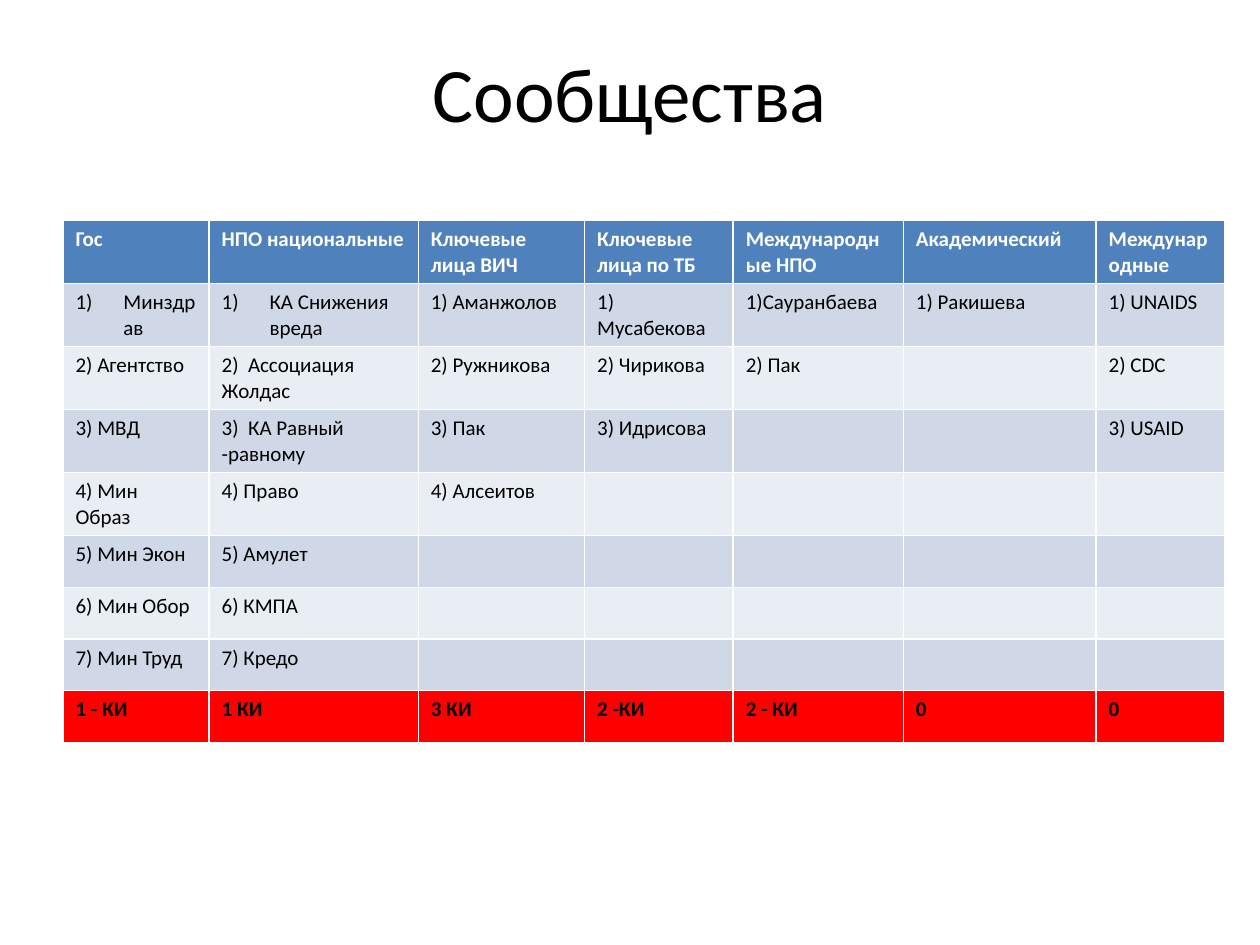
from lxml.etree import SubElement
from pptx import Presentation
from pptx.dml.color import RGBColor
from pptx.enum.text import MSO_ANCHOR, PP_ALIGN
from pptx.oxml.ns import qn
from pptx.util import Inches, Pt

TITLE = "Сообщества"
HEADS = ["Гос", "НПО национальные", "Ключевые лица ВИЧ", "Ключевые лица по ТБ",
         "Международные НПО", "Академический", "Международные"]
# Members of each community, top to bottom
LISTS = [
    ["Минздрав", "2) Агентство", "3) МВД", "4) Мин Образ",
     "5) Мин Экон", "6) Мин Обор", "7) Мин Труд"],
    ["КА Снижения вреда", "2)  Ассоциация Жолдас", "3)  КА Равный -равному",
     "4) Право", "5) Амулет", "6) КМПА", "7) Кредо"],
    ["1) Аманжолов", "2) Ружникова", "3) Пак", "4) Алсеитов"],
    ["1) Мусабекова", "2) Чирикова", "3) Идрисова"],
    ["1)Сауранбаева", "2) Пак"],
    ["1) Ракишева"],
    ["1) UNAIDS", "2) CDC", "3) USAID"],
]
TOTALS = ["1 - КИ", "1 КИ", "3 КИ", "2 -КИ", "2 - КИ", "0", "0"]
AUTO = {"Минздрав", "КА Снижения вреда"}  # numbered by the list format
WIDTHS = [1.16, 1.66, 1.32, 1.18, 1.35, 1.53, 1.02]
HIGH = 0.41
HEAD, ODD, EVEN, TOTAL = "4F81BD", "D0D8E8", "E9EDF4", "FF0000"


def color(code):
    return RGBColor.from_string(code)


def write(frame, text, size=12, ink="000000", bold=False, align=None):
    para = frame.paragraphs[0]
    para.alignment = align
    run = para.add_run()
    run.text = text
    font = run.font
    font.name, font.size, font.bold = "Calibri", Pt(size), bold
    font.color.rgb = color(ink)
    return para


def number(para):
    props = para._p.get_or_add_pPr()
    props.set("marL", str(Inches(0.38)))
    props.set("indent", str(Inches(-0.38)))
    SubElement(props, qn("a:buFont")).set("typeface", "+mj-lt")
    SubElement(props, qn("a:buAutoNum")).set("type", "arabicParenR")


deck = Presentation()
deck.slide_width, deck.slide_height = Inches(10), Inches(7.5)
slide = deck.slides.add_slide(deck.slide_layouts[6])

# Title
box = slide.shapes.add_textbox(Inches(0.5), Inches(0.3), Inches(9), Inches(0.85))
box.text_frame.word_wrap = True
box.text_frame.vertical_anchor = MSO_ANCHOR.MIDDLE
write(box.text_frame, TITLE, size=44, align=PP_ALIGN.CENTER)

# Rows: heads, members padded to equal length, totals
depth = max(map(len, LISTS))
body = [[col[i] if i < len(col) else "" for col in LISTS] for i in range(depth)]
rows = [HEADS, *body, TOTALS]
fills = [HEAD, *[EVEN if i % 2 else ODD for i in range(depth)], TOTAL]

# Table
grid = slide.shapes.add_table(
    len(rows), len(HEADS), Inches(0.5), Inches(1.75),
    Inches(sum(WIDTHS)), Inches(HIGH * len(rows))).table
for col, wide in zip(grid.columns, WIDTHS):
    col.width = Inches(wide)
for r, (row, fill) in enumerate(zip(rows, fills)):
    grid.rows[r].height = Inches(HIGH)
    for c, text in enumerate(row):
        cell = grid.cell(r, c)
        cell.fill.solid()
        cell.fill.fore_color.rgb = color(fill)
        if text:
            para = write(cell.text_frame, text, bold=fill in (HEAD, TOTAL),
                         ink="FFFFFF" if fill == HEAD else "000000")
            if text in AUTO:
                number(para)

deck.save("out.pptx")
